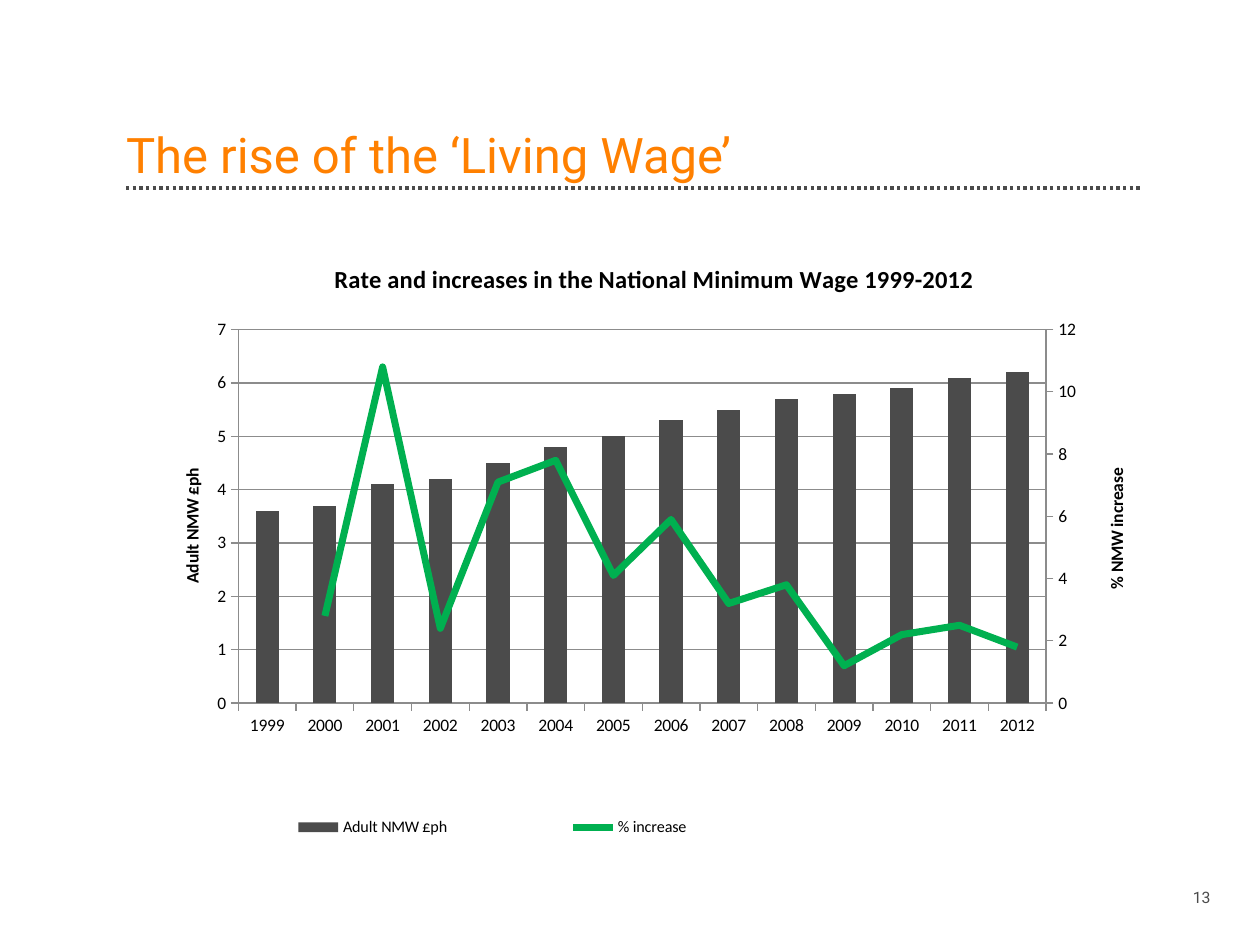
from copy import deepcopy

from lxml import etree
from pptx import Presentation
from pptx.chart.data import CategoryChartData
from pptx.dml.color import RGBColor
from pptx.enum.chart import XL_CHART_TYPE, XL_LEGEND_POSITION, XL_MARKER_STYLE, XL_TICK_MARK
from pptx.enum.dml import MSO_LINE
from pptx.enum.shapes import MSO_CONNECTOR
from pptx.enum.text import MSO_ANCHOR, MSO_AUTO_SIZE, PP_ALIGN
from pptx.oxml.ns import qn
from pptx.util import Emu, Inches, Pt

COLUMN = XL_CHART_TYPE.COLUMN_CLUSTERED
STRAIGHT = MSO_CONNECTOR.STRAIGHT
OUTSIDE = XL_TICK_MARK.OUTSIDE

ORANGE, GREY, GREEN, BLACK, AXIS_GREY = "FF8000", "4B4B4B", "00B050", "000000", "8C8C8C"
YEARS = [str(year) for year in range(1999, 2013)]
WAGES = [3.6, 3.7, 4.1, 4.2, 4.5, 4.8, 5, 5.3, 5.5, 5.7, 5.8, 5.9, 6.1, 6.2]
INCREASES = [None, 2.8, 10.8, 2.4, 7.1, 7.8, 4.1, 5.9, 3.2, 3.8, 1.2, 2.2, 2.5, 1.8]


def px(n):
    return Emu(round(n * 914400 / 126))


def color(value):
    return RGBColor.from_string(value)


def style_font(font, name, size, fill, bold=False):
    font.name, font.size, font.bold = name, Pt(size), bold
    font.color.rgb = color(fill)


def add_child(parent, tag, **attrs):
    child = etree.SubElement(parent, qn(tag))
    for key, value in attrs.items():
        child.set(key, str(value))
    return child


def remove_children(parent, tag):
    for child in parent.findall(qn(tag)):
        parent.remove(child)


def place(parent, index, inner=False, **box):
    """Give a chart part a manual layout, in fractions of the chart."""
    remove_children(parent, "c:layout")
    layout = etree.Element(qn("c:layout"))
    manual = add_child(layout, "c:manualLayout")
    if inner:
        add_child(manual, "c:layoutTarget", val="inner")
    for key in ("x", "y"):
        add_child(manual, f"c:{key}Mode", val="edge")
    for key, value in box.items():
        add_child(manual, f"c:{key}", val=value)
    parent.insert(index, layout)


def set_chart_title(title, text, size):
    title.text_frame.text = text
    style_font(title.text_frame.paragraphs[0].runs[0].font, "Calibri", size, BLACK, True)


def style_axis(axis):
    axis.major_tick_mark = OUTSIDE
    axis.format.line.color.rgb = color(AXIS_GREY)
    style_font(axis.tick_labels.font, "Calibri", 10, BLACK)


def style_value_axis(axis):
    style_axis(axis)
    axis.minimum_scale, axis.maximum_scale, axis.major_unit = 0, 7, 1
    axis.has_major_gridlines = True
    axis.major_gridlines.format.line.color.rgb = color(AXIS_GREY)
    set_chart_title(axis.axis_title, "Adult NMW £ph", 10)
    title = axis.axis_title.element
    body = title.find(".//" + qn("a:bodyPr"))
    body.set("rot", "-5400000")
    body.set("vert", "horz")
    place(title, 1, x=0.03, y=0.37)


def move_to_right_axis(plot_area):
    """Turn the second column series into a line with its own axes."""
    bars = plot_area.find(qn("c:barChart"))
    series = bars.findall(qn("c:ser"))[1]
    remove_children(series, "c:invertIfNegative")
    line = etree.Element(qn("c:lineChart"))
    add_child(line, "c:grouping", val="standard")
    add_child(line, "c:varyColors", val=0)
    line.append(series)
    add_child(line, "c:marker", val=1)
    ids = {"c:catAx": "5001", "c:valAx": "5002"}
    for axis_id in ids.values():
        add_child(line, "c:axId", val=axis_id)
    bars.addnext(line)

    val_axis = plot_area.find(qn("c:valAx"))
    cat, val = (deepcopy(plot_area.find(qn(tag))) for tag in ids)
    val_axis.addnext(val)
    val.addnext(cat)
    for axis, own, other in ((cat, "5001", "5002"), (val, "5002", "5001")):
        axis.find(qn("c:axId")).set("val", own)
        axis.find(qn("c:crossAx")).set("val", other)
    cat.find(qn("c:delete")).set("val", "1")
    remove_children(val, "c:majorGridlines")
    val.find(qn("c:axPos")).set("val", "r")
    val.find(qn("c:crosses")).set("val", "max")
    val.find(".//" + qn("c:max")).set("val", "12")
    val.find(qn("c:majorUnit")).set("val", "2")
    title = val.find(qn("c:title"))
    title.find(".//" + qn("a:t")).text = "% NMW increase"
    place(title, 1, x=0.94, y=0.37)


def add_wage_chart(slide):
    data = CategoryChartData()
    data.categories = YEARS
    data.add_series("Adult NMW £ph", WAGES)
    data.add_series("% increase", INCREASES)
    chart = slide.shapes.add_chart(COLUMN, px(147), px(232), px(1016), px(630), data).chart
    style_font(chart.font, "Calibri", 10, BLACK)
    chart.has_title = True
    set_chart_title(chart.chart_title, "Rate and increases in the National Minimum Wage 1999-2012", 14)
    place(chart.chart_title.element, 1, x=0.18, y=0.04)
    style_axis(chart.category_axis)
    style_value_axis(chart.value_axis)

    chart.has_legend = True
    chart.legend.position = XL_LEGEND_POSITION.RIGHT
    chart.legend.include_in_layout = False
    style_font(chart.legend.font, "Calibri", 9.2, BLACK)
    place(chart.element.find(".//" + qn("c:legend")), 1, x=0.03, y=0.91, w=0.62, h=0.07)

    plot_area = chart.element.find(".//" + qn("c:plotArea"))
    place(plot_area, 0, inner=True, x=0.09, y=0.155, w=0.795, h=0.593)
    move_to_right_axis(plot_area)
    columns, lines = chart.plots
    columns.gap_width = 150
    columns.vary_by_categories = False
    fill = columns.series[0].format.fill
    fill.solid()
    fill.fore_color.rgb = color(GREY)
    increase = lines.series[0]
    increase.smooth = False
    increase.marker.style = XL_MARKER_STYLE.NONE
    increase.format.line.width = Pt(4)
    increase.format.line.color.rgb = color(GREEN)


def add_title(slide, text):
    sp = slide.shapes.title
    sp.left, sp.top, sp.width, sp.height = px(126), px(69), px(1016), px(115)
    tf = sp.text_frame
    tf.text = text
    tf.auto_size = MSO_AUTO_SIZE.NONE
    tf.vertical_anchor = MSO_ANCHOR.BOTTOM
    tf.margin_left = tf.margin_top = tf.margin_right = tf.margin_bottom = 0
    p = tf.paragraphs[0]
    p.alignment, p.line_spacing = PP_ALIGN.LEFT, 0.9
    style_font(p.runs[0].font, "Roboto", 28, ORANGE)


def add_dotted_rule(slide):
    rule = slide.shapes.add_connector(STRAIGHT, px(126), px(188), px(1142), px(188))
    rule.line.color.rgb = color(GREY)
    rule.line.width = Pt(1.9)
    rule.line.dash_style = MSO_LINE.ROUND_DOT
    add_child(rule._element.spPr, "a:effectLst")


def add_page_number(slide, number):
    tf = slide.shapes.add_textbox(px(1160), px(881), px(63), px(32)).text_frame
    tf.word_wrap = True
    tf.vertical_anchor = MSO_ANCHOR.MIDDLE
    tf.text = number
    p = tf.paragraphs[0]
    p.alignment = PP_ALIGN.RIGHT
    style_font(p.runs[0].font, "Roboto", 9, GREY)


def main():
    prs = Presentation()
    prs.slide_width, prs.slide_height = Inches(10), Inches(7.5)
    slide = prs.slides.add_slide(prs.slide_layouts[5])
    add_dotted_rule(slide)
    add_title(slide, "The rise of the ‘Living Wage’")
    add_page_number(slide, "13")
    add_wage_chart(slide)
    prs.save("out.pptx")


if __name__ == "__main__":
    main()
